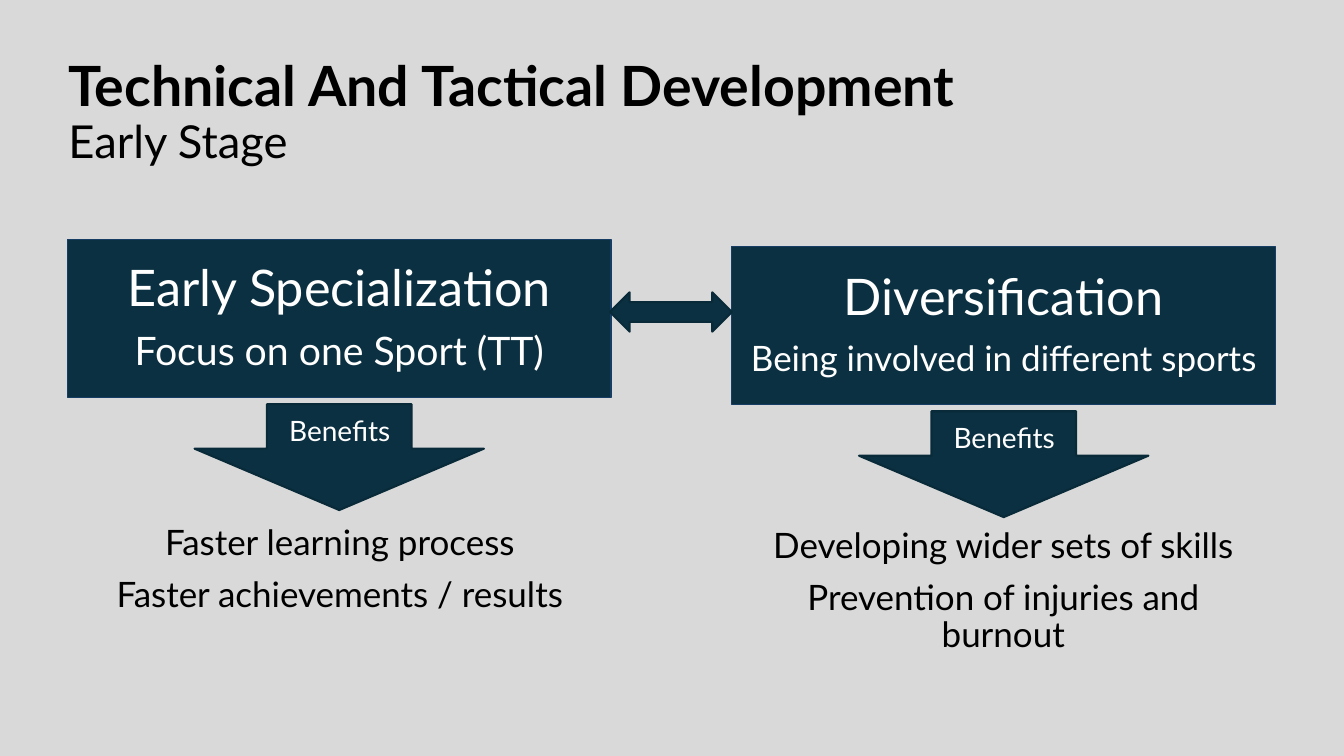
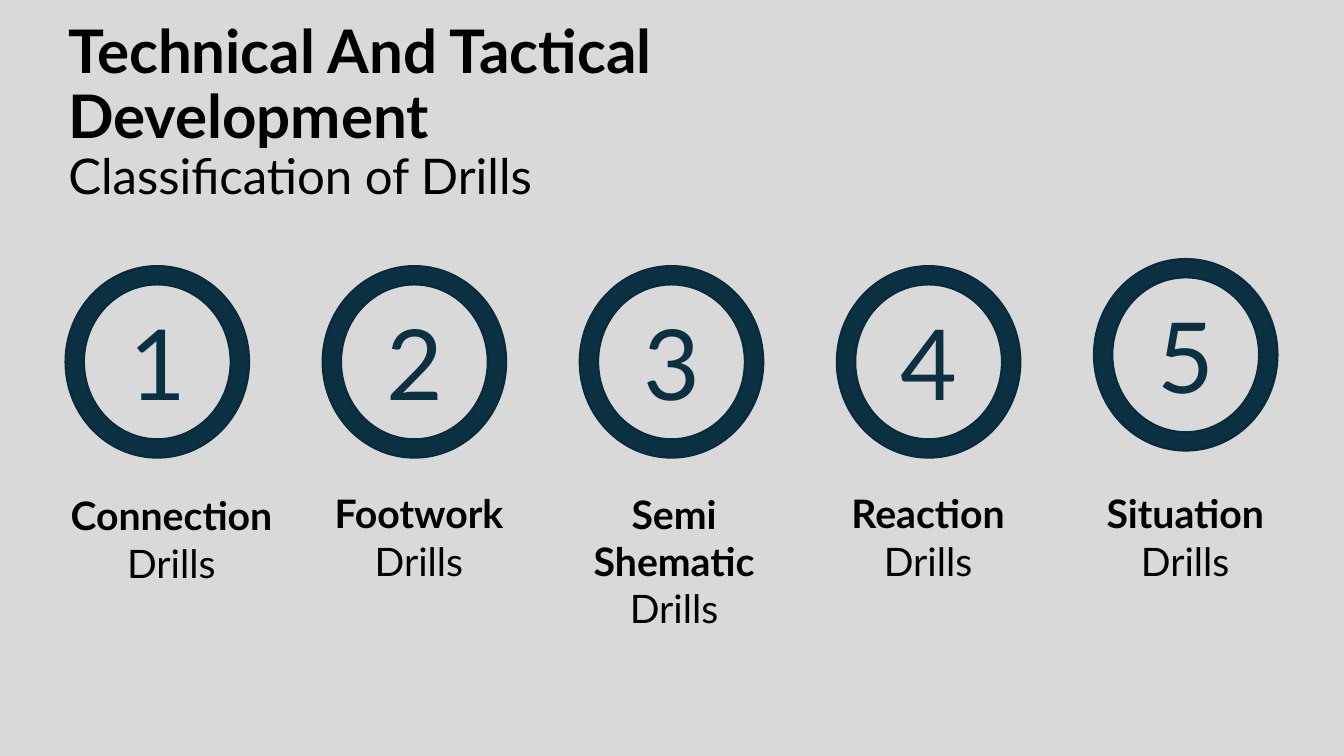
from pptx import Presentation
from pptx.dml.color import RGBColor
from pptx.enum.shapes import MSO_SHAPE as Shape
from pptx.enum.text import MSO_ANCHOR as Anchor, PP_ALIGN as Align
from pptx.util import Inches, Pt

FONT = "Lato"
GREY, NAVY, EDGE, BLUE = "D9D9D9", "0B3041", "092A39", "163E64"
BLACK, WHITE = "000000", "FFFFFF"
TITLE = "Technical And Tactical Development"
BOX_WIDTH, BOX_HEIGHT = 5.39, 1.56
RING_LEFT, RING_PITCH, RING_WIDTH, RING_HEIGHT = 0.65, 2.55, 1.82, 1.9

COLUMNS = [
    (0.67, 2.38, "Early Specialization", "Focus on one Sport (TT)", 28,
     (0.68, 5.16, 5.38, 1.45),
     ["Faster learning process", "Faster achievements / results"]),
    (7.26, 2.45, "Diversification", "Being involved in different sports", 25,
     (7.29, 5.19, 5.32, 1.45),
     ["Developing wider sets of skills", "Prevention of injuries and burnout"]),
]
DRILLS = [
    ("Connection", 2.64, (0.47, 4.83, 2.46, 1.04)),
    ("Footwork", 2.64, (3.14, 4.81, 2.03, 1.04)),
    ("Semi Shematic", 2.64, (5.59, 4.81, 2.19, 1.51)),
    ("Reaction", 2.64, (8.08, 4.81, 2.25, 1.04)),
    ("Situation", 2.57, (10.76, 4.81, 1.99, 1.04)),
]


def color(value):
    return RGBColor.from_string(value)


def new_page(deck):
    page = deck.slides.add_slide(deck.slide_layouts[6])
    page.background.fill.solid()
    page.background.fill.fore_color.rgb = color(GREY)
    return page


def add_solid(page, kind, area, edge=EDGE, weight=1.5, adjustments=()):
    solid = page.shapes.add_shape(kind, *map(Inches, area))
    solid.shadow.inherit = False
    solid.fill.solid()
    solid.fill.fore_color.rgb = color(NAVY)
    solid.line.color.rgb = color(edge)
    solid.line.width = Pt(weight)
    for index, value in enumerate(adjustments):
        solid.adjustments[index] = value
    return solid


def add_text_box(page, area, anchor=Anchor.TOP):
    box = page.shapes.add_textbox(*map(Inches, area))
    box.text_frame.word_wrap = True
    box.text_frame.vertical_anchor = anchor
    return box


def style(para, size, ink=BLACK, align=Align.CENTER, spacing=1.0):
    para.font.name = FONT
    para.font.size = Pt(size)
    para.font.color.rgb = color(ink)
    para.alignment = align
    para.line_spacing = spacing


def write_lines(box, lines, ink=BLACK, spacing=0.9):
    frame = box.text_frame
    for index, (text, size) in enumerate(lines):
        para = frame.add_paragraph() if index else frame.paragraphs[0]
        para.text = text
        style(para, size, ink, spacing=spacing)
        if index:
            para.space_before = Pt(10)


def add_span(para, text, bold=False, size=None):
    span = para.add_run()
    span.text = text
    span.font.bold = bold
    if size:
        span.font.size = Pt(size)


def add_title(page, subtitle, title_size, subtitle_size):
    box = add_text_box(page, (0.58, 0.4, 9.38, 1.45), Anchor.MIDDLE)
    para = box.text_frame.paragraphs[0]
    style(para, title_size, align=Align.LEFT, spacing=0.9)
    add_span(para, TITLE, bold=True)
    para.add_line_break()
    add_span(para, subtitle, size=subtitle_size)


def add_column(page, left, top, heading, detail, detail_size, list_area, benefits):
    box = add_solid(page, Shape.RECTANGLE, (left, top, BOX_WIDTH, BOX_HEIGHT), BLUE, 0.75)
    box.text_frame.word_wrap = True
    box.text_frame.vertical_anchor = Anchor.MIDDLE
    write_lines(box, [(heading, 36), (detail, detail_size)], WHITE)
    width = 2.87
    arrow_left = left + (BOX_WIDTH - width) / 2
    add_solid(page, Shape.DOWN_ARROW, (arrow_left, top + 1.63, width, 1.05),
              adjustments=(0.5, 0.58))
    label = add_text_box(page, (arrow_left - 0.55, top + 1.61, 3.98, 0.48))
    write_lines(label, [("Benefits", 20)], WHITE, 1.2)
    write_lines(add_text_box(page, list_area), [(text, 25) for text in benefits])


def add_drill(page, number, name, top, label_area):
    left = RING_LEFT + (number - 1) * RING_PITCH
    add_solid(page, Shape.DONUT, (left, top, RING_WIDTH, RING_HEIGHT), adjustments=(0.1,))
    digit = add_text_box(page, (left + 0.15, top + 0.31, 1.53, 1.28))
    write_lines(digit, [(str(number), 70)], NAVY, 1.0)
    para = add_text_box(page, label_area).text_frame.paragraphs[0]
    style(para, 28)
    add_span(para, name + " ", bold=True)
    add_span(para, "Drills")


def build_early_stage(deck):
    page = new_page(deck)
    add_title(page, "Early Stage", 39.6, 32.4)
    for column in COLUMNS:
        add_column(page, *column)
    add_solid(page, Shape.LEFT_RIGHT_ARROW, (6.05, 2.9, 1.21, 0.39))


def build_drills(deck):
    page = new_page(deck)
    add_title(page, "Classification of Drills", 42.9, 35.1)
    for number, drill in enumerate(DRILLS, 1):
        add_drill(page, number, *drill)


def main():
    deck = Presentation()
    deck.slide_width, deck.slide_height = Inches(13.33), Inches(7.5)
    build_early_stage(deck)
    build_drills(deck)
    deck.save("out.pptx")


if __name__ == "__main__":
    main()
